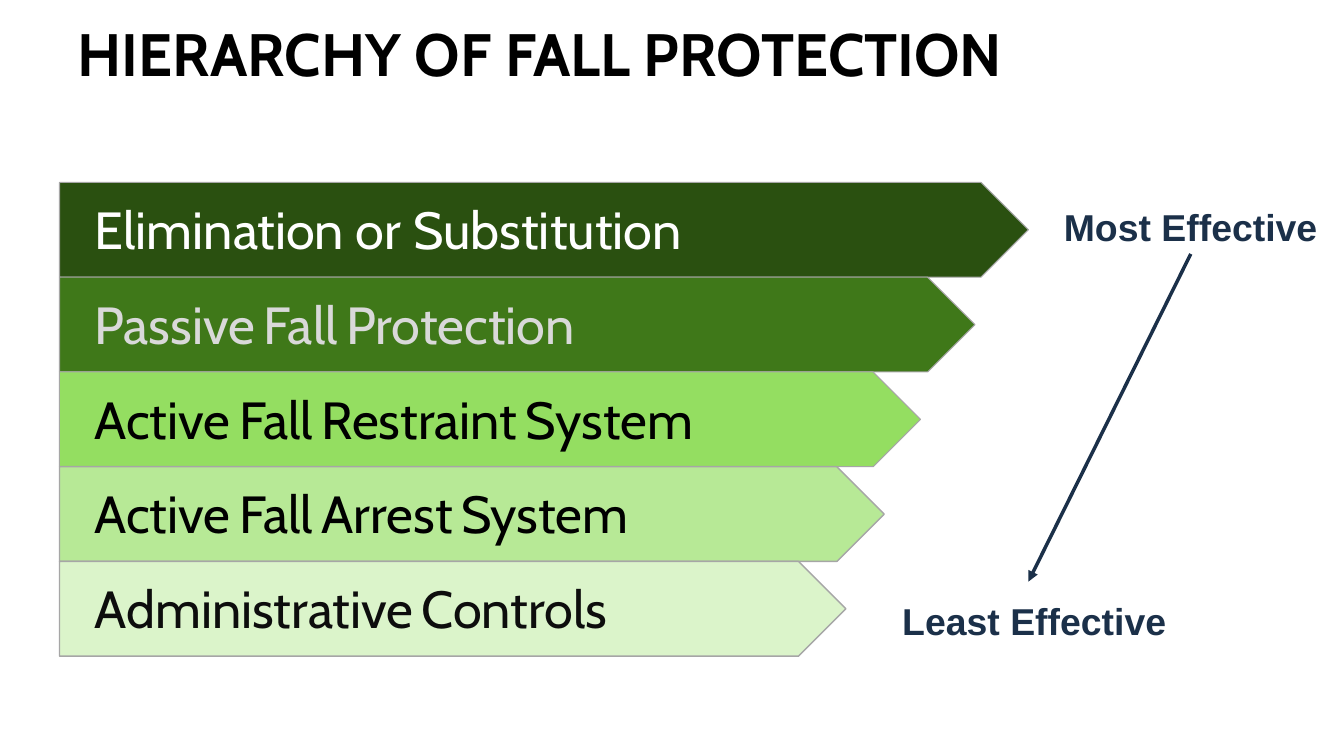
from lxml import etree
from pptx import Presentation
from pptx.dml.color import RGBColor
from pptx.enum.shapes import MSO_CONNECTOR, MSO_SHAPE
from pptx.enum.text import MSO_ANCHOR, MSO_AUTO_SIZE, PP_ALIGN
from pptx.oxml.ns import qn
from pptx.util import Inches, Pt

TITLE = "HIERARCHY OF FALL PROTECTION"
COLOURS = {
    "title": "000000", "outline": "A6A6A6", "effect": "1B3049",
    "darkest": "2A5010", "dark": "3F7819", "mid": "94DE61",
    "light": "B7E996", "lightest": "DBF4CA",
    "white": "FFFFFF", "grey": "D9D9D9", "black": "000000", "soft black": "0D0D0D",
}
# text, bar width, bar colour, outline width, text width, text colour, space size
LEVELS = [
    ("Elimination or Substitution", 9.61, "darkest", 0.75, 6.46, "white", 37.3),
    ("Passive Fall Protection", 9.08, "dark", 0.75, 5.37, "grey", 26.7),
    ("Active Fall Restraint System", 8.54, "mid", 0.75, 6.62, "black", 26.7),
    ("Active Fall Arrest System", 8.18, "light", 1, 5.93, "black", 26.7),
    ("Administrative Controls", 7.8, "lightest", 1, 5.66, "soft black", 26.7),
]
# text, left, top, width
EFFECTS = [("Most Effective", 10.37, 1.98, 2.88), ("Least Effective", 8.45, 5.89, 3.62)]
BAR_LEFT, BAR_TOP, BAR_HEIGHT = 0.59, 1.81, 0.94
TEXT_LEFT, TEXT_DROP, TEXT_HEIGHT = 0.84, 0.1, 0.73
ARROW = (11.81, 2.52, 10.2, 5.77)


def colour(name):
    return RGBColor.from_string(COLOURS[name])


def add_span(para, text, size, font, tint, bold=False):
    span = para.add_run()
    span.text = text
    formats = {"size": Pt(size), "name": font, "bold": bold}
    for name, value in formats.items():
        setattr(span.font, name, value)
    span.font.color.rgb = colour(tint)


def set_frame(frame, **formats):
    for name, value in formats.items():
        setattr(frame, name, value)


def add_level(page, row, text, width, fill, outline, text_width, tint, space_size):
    top = BAR_TOP + row * BAR_HEIGHT
    bar = page.shapes.add_shape(MSO_SHAPE.PENTAGON, Inches(BAR_LEFT), Inches(top),
                                Inches(width), Inches(BAR_HEIGHT))
    bar.shadow.inherit = False
    bar.fill.solid()
    bar.fill.fore_color.rgb = colour(fill)
    bar.line.color.rgb = colour("outline")
    bar.line.width = Pt(outline)

    box = page.shapes.add_textbox(Inches(TEXT_LEFT), Inches(top + TEXT_DROP),
                                  Inches(text_width), Inches(TEXT_HEIGHT))
    set_frame(box.text_frame, word_wrap=False, auto_size=MSO_AUTO_SIZE.SHAPE_TO_FIT_TEXT)
    para = box.text_frame.paragraphs[0]
    for index, word in enumerate(text.split()):
        if index:
            add_span(para, " ", space_size, "Cabin", tint)
        add_span(para, word, 37.3, "Cabin", tint)


def add_effect(page, text, left, top, width):
    box = page.shapes.add_textbox(Inches(left), Inches(top), Inches(width), Inches(0.54))
    set_frame(box.text_frame, word_wrap=True, vertical_anchor=MSO_ANCHOR.MIDDLE)
    para = box.text_frame.paragraphs[0]
    para.alignment = PP_ALIGN.CENTER
    add_span(para, text, 26.7, "Arial", "effect", bold=True)


def add_arrow(page):
    arrow = page.shapes.add_connector(MSO_CONNECTOR.STRAIGHT, *map(Inches, ARROW))
    arrow.line.color.rgb = colour("effect")
    arrow.line.width = Pt(2.5)
    etree.SubElement(arrow.line._get_or_add_ln(), qn("a:tailEnd"), type="triangle")
    etree.SubElement(arrow._element.spPr, qn("a:effectLst"))


def main():
    deck = Presentation()
    deck.slide_width, deck.slide_height = Inches(13.33), Inches(7.5)
    page = deck.slides.add_slide(deck.slide_layouts[5])

    # Title
    title = page.shapes.title
    title.left, title.top = Inches(0.67), Inches(0.32)
    title.width, title.height = Inches(11.8), Inches(0.41)
    set_frame(title.text_frame, word_wrap=True, auto_size=MSO_AUTO_SIZE.NONE,
              vertical_anchor=MSO_ANCHOR.MIDDLE)
    para = title.text_frame.paragraphs[0]
    para.alignment = PP_ALIGN.LEFT
    add_span(para, TITLE, 42.7, "Cabin", "title", bold=True)

    # Levels from most to least effective
    for row, level in enumerate(LEVELS):
        add_level(page, row, *level)

    # Effectiveness scale
    for effect in EFFECTS:
        add_effect(page, *effect)
    add_arrow(page)

    deck.save("out.pptx")


if __name__ == "__main__":
    main()
